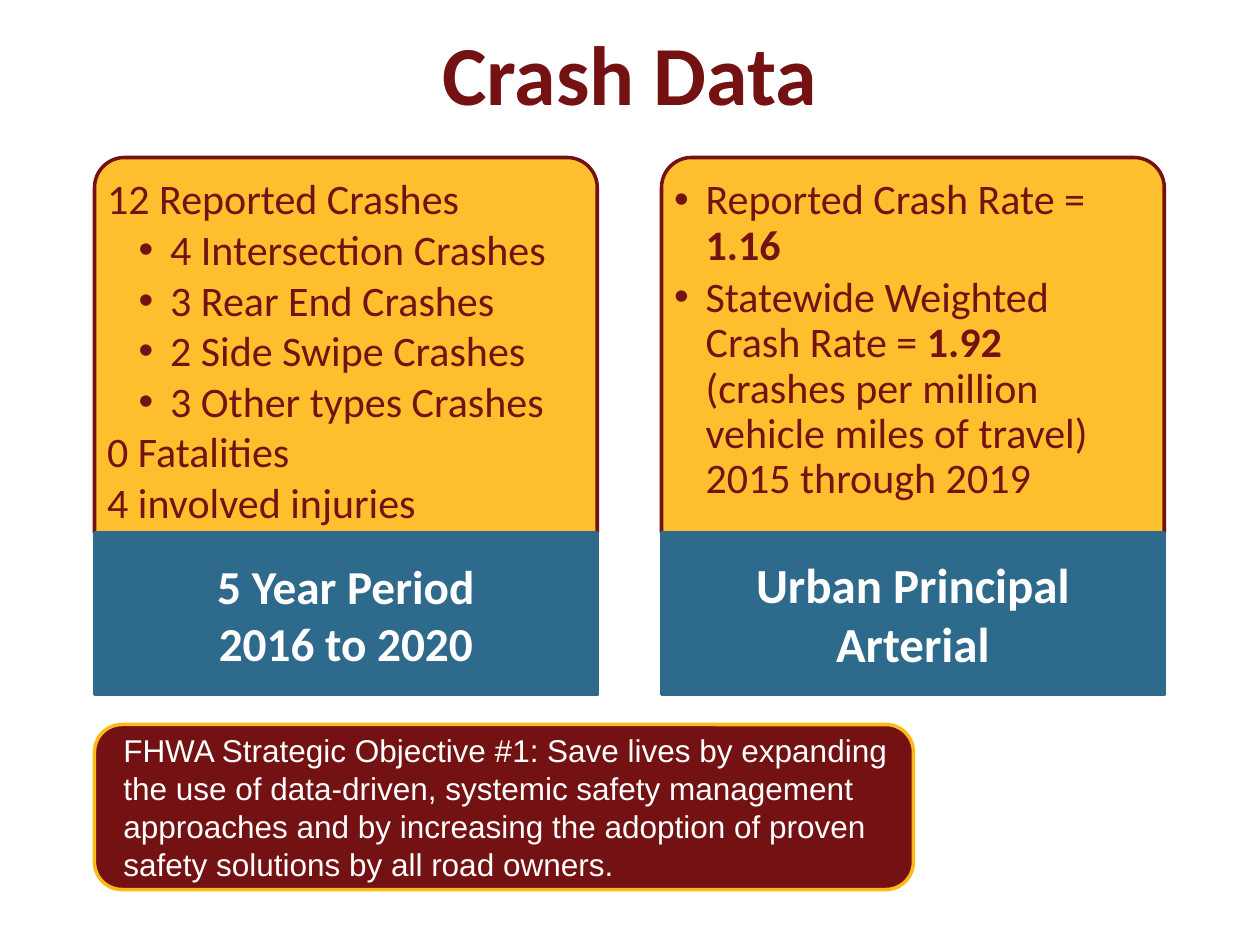
"""Build the crash data slide."""
from lxml import etree
from pptx import Presentation
from pptx.dml.color import RGBColor
from pptx.enum import shapes, text
from pptx.oxml.ns import qn
from pptx.util import Pt

RED = RGBColor(0x74, 0x11, 0x12)
GOLD = RGBColor(0xFD, 0xB9, 0x17)
BLUE = RGBColor(0x2E, 0x6A, 0x8C)
WHITE = RGBColor(0xFF, 0xFF, 0xFF)

LEFT, STEP, WIDE = 54, 324, 287.3
TOP, TALL, FOOT = 90, 214.6, 92.2

CRASHES = [
    (1, False, "12 Reported Crashes"),
    (2, True, "4 Intersection Crashes"),
    (2, True, "3 Rear End Crashes"),
    (2, True, "2 Side Swipe Crashes"),
    (2, True, "3 Other types Crashes"),
    (1, False, "0 Fatalities"),
    (1, False, "4 involved injuries"),
]
RATES = [
    (1, True, "Reported Crash Rate = *1.16"),
    (1, True, "Statewide Weighted Crash Rate = *1.92* (crashes per million "
              "vehicle miles of travel) 2015 through 2019"),
]
GOAL = ("FHWA Strategic Objective #1: Save lives by expanding the use of "
        "data-driven, systemic safety management approaches and by increasing "
        "the adoption of proven safety solutions by all road owners.")


def write(para, words, *, size, color, font="Calibri", bold=False,
          align=text.PP_ALIGN.LEFT):
    """Write text in a paragraph; asterisks switch bold on and off."""
    para.alignment = align
    for n, part in enumerate(words.split("*")):
        run = para.add_run()
        run.text = part
        run.font.name, run.font.size = font, Pt(size)
        run.font.bold = bold or n % 2 == 1
        run.font.color.rgb = color


def indent(para, left, hang=0, dot=False):
    """Set a paragraph's indents and its bullet."""
    props = para._p.get_or_add_pPr()
    props.set("marL", str(Pt(left)))
    props.set("indent", str(Pt(-hang)))
    if dot:
        etree.SubElement(props, qn("a:buFont")).set("typeface", "Arial")
        etree.SubElement(props, qn("a:buChar")).set("char", "•")
    else:
        etree.SubElement(props, qn("a:buNone"))


def frame(item, sides=7.2, top=3.6, foot=3.6, anchor=text.MSO_ANCHOR.MIDDLE):
    """Prepare the text frame of a shape or text box."""
    body = item.text_frame
    body.word_wrap = True
    body.vertical_anchor = anchor
    body.margin_left = body.margin_right = Pt(sides)
    body.margin_top, body.margin_bottom = Pt(top), Pt(foot)
    return body


def paras(body, count):
    """Return the given number of paragraphs of a frame."""
    for _ in range(count - 1):
        body.add_paragraph()
    return body.paragraphs


def panel(slide, kind, box, fill, line):
    """Add a filled and outlined preset shape."""
    item = slide.shapes.add_shape(kind, *map(Pt, box))
    item.shadow.inherit = False
    item.fill.solid()
    item.fill.fore_color.rgb = fill
    item.line.color.rgb = line
    item.line.width = Pt(2)
    return item


def card(slide, col, rows, after):
    """Add a gold card with a list of rows."""
    item = panel(slide, shapes.MSO_SHAPE.ROUND_2_SAME_RECTANGLE,
                 (LEFT + col * STEP, TOP, WIDE, TALL), GOLD, RED)
    item.adjustments[0] = 0.08
    tint = item.fill._xPr.find(qn("a:solidFill"))[0]
    etree.SubElement(tint, qn("a:alpha")).set("val", "90000")
    body = frame(item, 2.2, 7, 2, text.MSO_ANCHOR.TOP)
    for para, (level, dot, words) in zip(paras(body, len(rows)), rows):
        para.level = level
        para.line_spacing = 0.9
        para.space_before, para.space_after = Pt(0), Pt(after)
        indent(para, 18 * level, 18, dot)
        write(para, words, size=24, color=RED)


def label(slide, col, lines, size):
    """Add the blue label below a card."""
    item = panel(slide, shapes.MSO_SHAPE.RECTANGLE,
                 (LEFT + col * STEP, TOP + TALL, WIDE, FOOT), BLUE, BLUE)
    body = frame(item, 8, 0, 0)
    for para, words in zip(paras(body, len(lines)), lines):
        write(para, words, size=size, color=WHITE, bold=True,
              align=text.PP_ALIGN.CENTER)


def goal(slide):
    """Add the objective banner."""
    panel(slide, shapes.MSO_SHAPE.ROUNDED_RECTANGLE,
          (LEFT, 414, 468, 94.3), RED, GOLD)
    box = slide.shapes.add_textbox(Pt(LEFT), Pt(424.8), Pt(468), Pt(72.7))
    para = frame(box).paragraphs[0]
    indent(para, 9.4)
    write(para, GOAL, size=18, color=WHITE, font="Arial")


def title(slide):
    """Add the slide title."""
    box = slide.shapes.add_textbox(Pt(36), Pt(0), Pt(648), Pt(72))
    write(frame(box, top=13.2).paragraphs[0], "Crash Data", size=48, color=RED,
          bold=True, align=text.PP_ALIGN.CENTER)


def main():
    """Build and save the slide."""
    deck = Presentation()
    deck.slide_width, deck.slide_height = Pt(720), Pt(540)
    slide = deck.slides.add_slide(deck.slide_layouts[6])
    goal(slide)
    card(slide, 0, CRASHES, 3)
    label(slide, 0, ["5 Year Period", "2016 to 2020"], 27)
    card(slide, 1, RATES, 4)
    label(slide, 1, ["Urban Principal Arterial"], 28)
    title(slide)
    deck.save("out.pptx")


if __name__ == "__main__":
    main()
